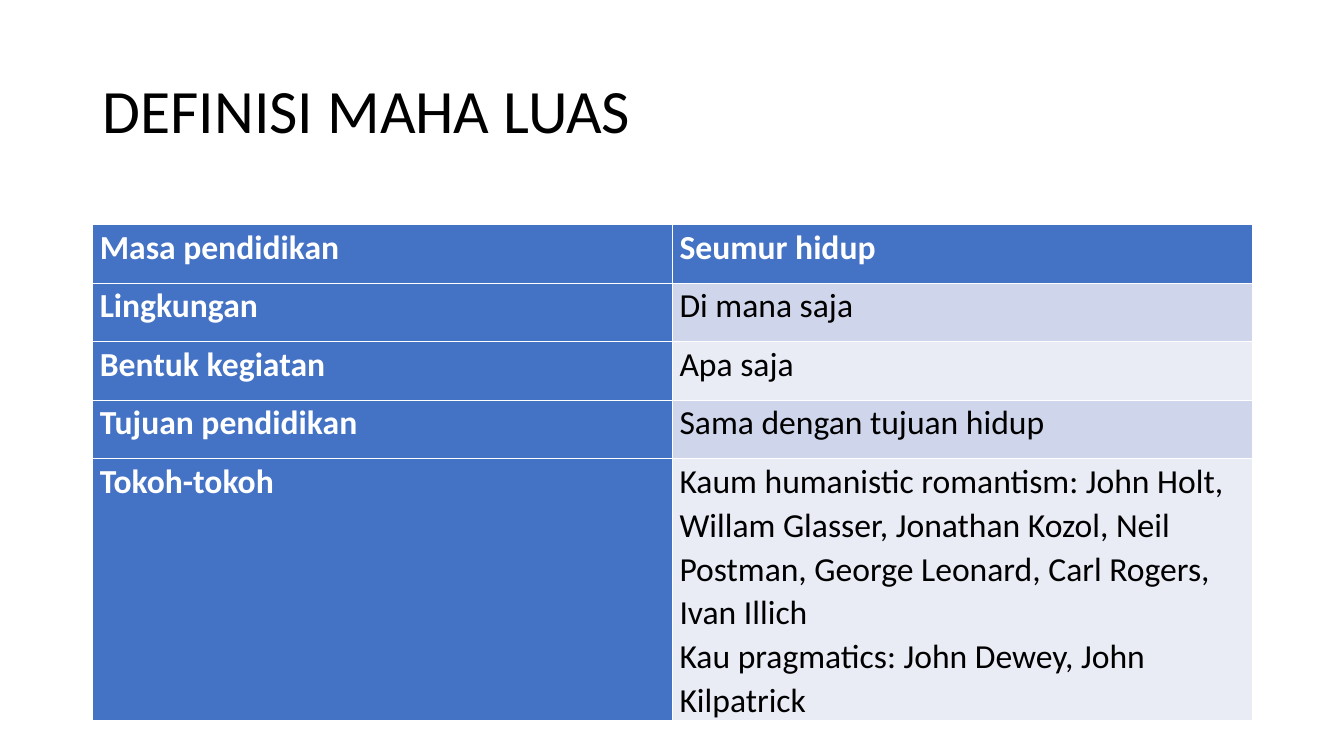
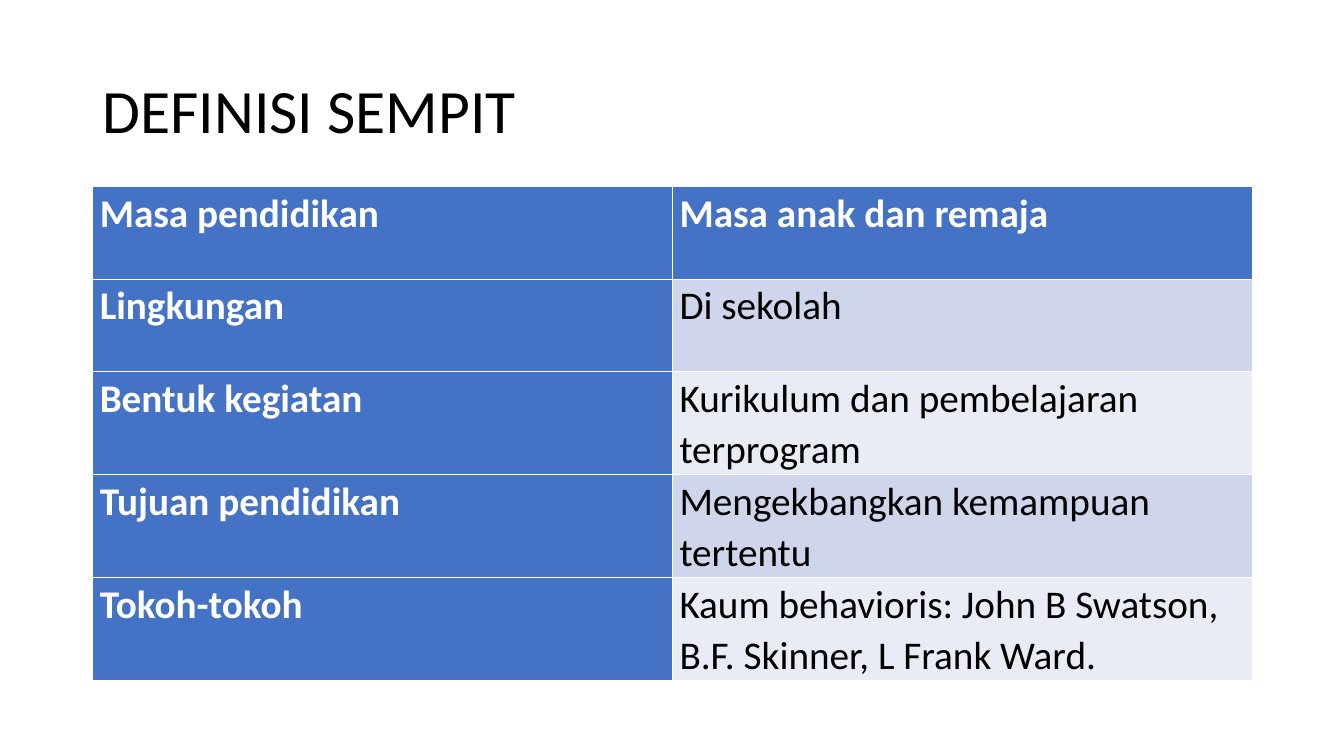
"""Build two slides that compare definitions of education in tables."""
from dataclasses import dataclass

from pptx import Presentation
from pptx.dml.color import RGBColor
from pptx.enum.text import MSO_ANCHOR
from pptx.util import Inches, Pt


@dataclass(frozen=True)
class Theme:
    font: str = "Calibri"
    title_size: int = 44
    text: RGBColor = RGBColor(0x00, 0x00, 0x00)
    header_text: RGBColor = RGBColor(0xFF, 0xFF, 0xFF)
    header_fill: RGBColor = RGBColor(0x44, 0x72, 0xC4)
    bands: tuple = (RGBColor(0xE9, 0xEB, 0xF5), RGBColor(0xCF, 0xD5, 0xEA))


THEME = Theme()
LEFT, WIDTH = 0.92, 11.5
TITLE_TOP, TITLE_HEIGHT = 0.4, 1.45
CELL_MARGIN = 0.07
ASPECTS = ("Masa pendidikan", "Lingkungan", "Bentuk kegiatan",
           "Tujuan pendidikan", "Tokoh-tokoh")
DEFINITIONS = [
    {
        "title": "DEFINISI MAHA LUAS",
        "top": 2.23,
        "text_size": 24,
        "row_heights": (0.58, 0.58, 0.58, 0.58, 2.6),
        "answers": (
            "Seumur hidup",
            "Di mana saja",
            "Apa saja",
            "Sama dengan tujuan hidup",
            "Kaum humanistic romantism: John Holt, Willam Glasser, "
            "Jonathan Kozol, Neil Postman, George Leonard, Carl Rogers, "
            "Ivan Illich\nKau pragmatics: John Dewey, John Kilpatrick",
        ),
    },
    {
        "title": "DEFINISI SEMPIT",
        "top": 1.85,
        "text_size": 28,
        "row_heights": (0.92, 0.92, 1.02, 1.02, 1.02),
        "answers": (
            "Masa anak dan remaja",
            "Di sekolah",
            "Kurikulum dan pembelajaran terprogram",
            "Mengekbangkan kemampuan tertentu",
            "Kaum behavioris: John B Swatson, B.F. Skinner, L Frank Ward.",
        ),
    },
]


def write_text(text_frame, text, size, color, bold, line_spacing):
    text_frame.text = text
    for paragraph in text_frame.paragraphs:
        paragraph.line_spacing = line_spacing
        paragraph.font.name = THEME.font
        paragraph.font.size = Pt(size)
        paragraph.font.bold = bold
        paragraph.font.color.rgb = color


def add_title(slide, title):
    shape = slide.shapes.add_textbox(Inches(LEFT), Inches(TITLE_TOP),
                                     Inches(WIDTH), Inches(TITLE_HEIGHT))
    shape.text_frame.word_wrap = True
    shape.text_frame.vertical_anchor = MSO_ANCHOR.MIDDLE
    write_text(shape.text_frame, title, THEME.title_size, THEME.text, False, 0.9)


def fill_cell(cell, text, size, fill, is_header):
    cell.margin_left = cell.margin_right = Inches(CELL_MARGIN)
    cell.margin_top = cell.margin_bottom = 0
    cell.fill.solid()
    cell.fill.fore_color.rgb = fill
    color = THEME.header_text if is_header else THEME.text
    write_text(cell.text_frame, text, size, color, is_header, 1.07)


def add_definition_table(slide, definition):
    heights = definition["row_heights"]
    table = slide.shapes.add_table(
        len(ASPECTS), 2, Inches(LEFT), Inches(definition["top"]),
        Inches(WIDTH), Inches(sum(heights))).table
    table.first_col = True
    rows = zip(ASPECTS, definition["answers"])
    for row_index, row in enumerate(rows):
        table.rows[row_index].height = Inches(heights[row_index])
        for column_index, text in enumerate(row):
            is_header = row_index == 0 or column_index == 0
            fill = THEME.header_fill if is_header else THEME.bands[row_index % 2]
            fill_cell(table.cell(row_index, column_index), text,
                      definition["text_size"], fill, is_header)


def main():
    presentation = Presentation()
    presentation.slide_width = Inches(13.33)
    presentation.slide_height = Inches(7.5)
    blank_layout = presentation.slide_layouts[6]
    for definition in DEFINITIONS:
        slide = presentation.slides.add_slide(blank_layout)
        add_title(slide, definition["title"])
        add_definition_table(slide, definition)
    presentation.save("out.pptx")


if __name__ == "__main__":
    main()
